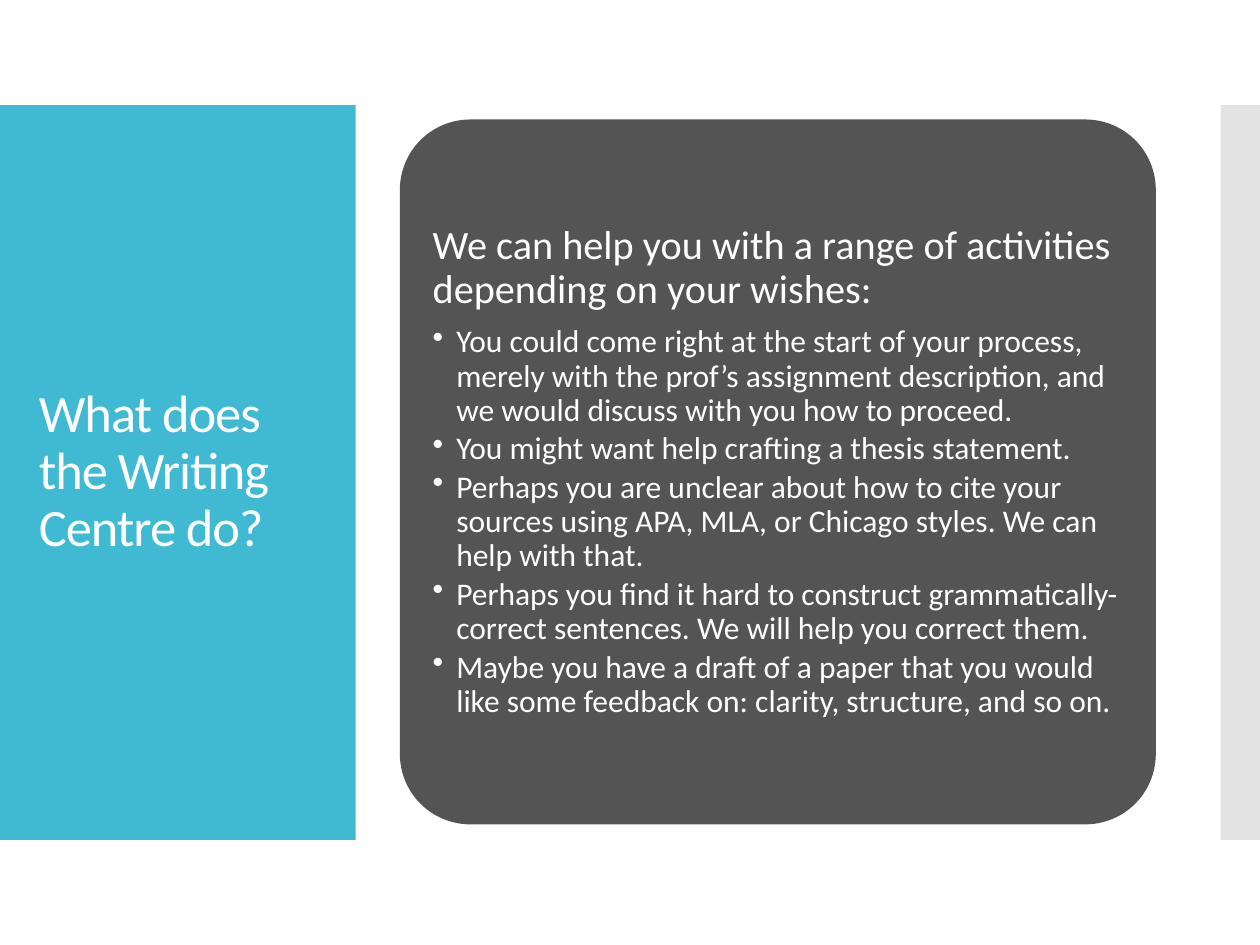
from lxml import etree
from pptx import Presentation
from pptx.dml.color import RGBColor
from pptx.enum.shapes import MSO_SHAPE
from pptx.enum.text import MSO_ANCHOR, PP_ALIGN
from pptx.oxml.ns import qn
from pptx.util import Pt

WHITE = RGBColor(0xFF, 0xFF, 0xFF)
TEAL = RGBColor(0x40, 0xBA, 0xD2)
CHARCOAL = RGBColor(0x54, 0x54, 0x54)
SILVER = RGBColor(0xC8, 0xC8, 0xC8)

FONT = "Calibri"
BAND_TOP, BAND_HEIGHT = 60, 420
TITLE = "What does the Writing Centre do?"
LEAD = "We can help you with a range of activities depending on your wishes:"
SERVICES = [
    "You could come right at the start of your process, merely with the prof’s "
    "assignment description, and we would discuss with you how to proceed.",
    "You might want help crafting a thesis statement.",
    "Perhaps you are unclear about how to cite your sources using APA, MLA, or "
    "Chicago styles. We can help with that.",
    "Perhaps you find it hard to construct grammatically-correct sentences. "
    "We will help you correct them.",
    "Maybe you have a draft of a paper that you would like some feedback on: "
    "clarity, structure, and so on.",
]


def write(paragraph, text, *, size, after=0, indent=0, bullet=None, tracking=None):
    paragraph.alignment = PP_ALIGN.LEFT
    paragraph.line_spacing = 0.9
    paragraph.space_before = Pt(0)
    paragraph.space_after = Pt(after)
    run = paragraph.add_run()
    run.text = text
    run.font.name = FONT
    run.font.size = Pt(size)
    run.font.color.rgb = WHITE
    if tracking:
        run.font._element.set("spc", str(round(tracking * 100)))
    if bullet:
        properties = paragraph._p.get_or_add_pPr()
        properties.set("marL", str(Pt(indent)))
        properties.set("indent", str(-Pt(indent)))
        etree.SubElement(properties, qn("a:buChar"), char=bullet)


def add_block(slide, box, color, *, preset=MSO_SHAPE.RECTANGLE, opacity=100):
    block = slide.shapes.add_shape(preset, *map(Pt, box))
    block.shadow.inherit = False
    block.fill.solid()
    block.fill.fore_color.rgb = color
    block.line.fill.background()
    if opacity < 100:
        srgb = block.fill._xPr.find(".//" + qn("a:srgbClr"))
        etree.SubElement(srgb, qn("a:alpha"), val=str(opacity * 1000))
    return block


def add_title_panel(slide, box):
    left, top, width, height = box
    add_block(slide, box, TEAL)
    title = slide.shapes.title
    slide.shapes._spTree.append(title._element)
    title.left, title.top = Pt(left + 15), Pt(top + 29)
    title.width, title.height = Pt(width - 29), Pt(height - 58)
    title.text_frame.word_wrap = True
    title.text_frame.vertical_anchor = MSO_ANCHOR.MIDDLE
    write(title.text_frame.paragraphs[0], TITLE, size=30, tracking=-0.6)


def add_services_card(slide, box):
    card = add_block(slide, box, CHARCOAL, preset=MSO_SHAPE.ROUNDED_RECTANGLE)
    card.adjustments[0] = 0.1
    frame = card.text_frame
    frame.word_wrap = True
    frame.vertical_anchor = MSO_ANCHOR.MIDDLE
    frame.margin_left = frame.margin_right = Pt(7)
    frame.margin_top = frame.margin_bottom = Pt(7)
    write(frame.paragraphs[0], LEAD, size=23, after=8)
    for service in SERVICES:
        paragraph = frame.add_paragraph()
        paragraph.level = 1
        write(paragraph, service, size=18, after=2.7, indent=13.5, bullet="•")


def add_edge_bar(slide, box):
    add_block(slide, box, SILVER, opacity=50)


def main():
    deck = Presentation()
    deck.slide_width, deck.slide_height = Pt(720), Pt(540)
    slide = deck.slides.add_slide(deck.slide_layouts[5])
    add_title_panel(slide, (0, BAND_TOP, 203.3, BAND_HEIGHT))
    add_edge_bar(slide, (697.5, BAND_TOP, 22.5, BAND_HEIGHT))
    add_services_card(slide, (228.5, 68.3, 432, 402.8))
    deck.save("out.pptx")


if __name__ == "__main__":
    main()
